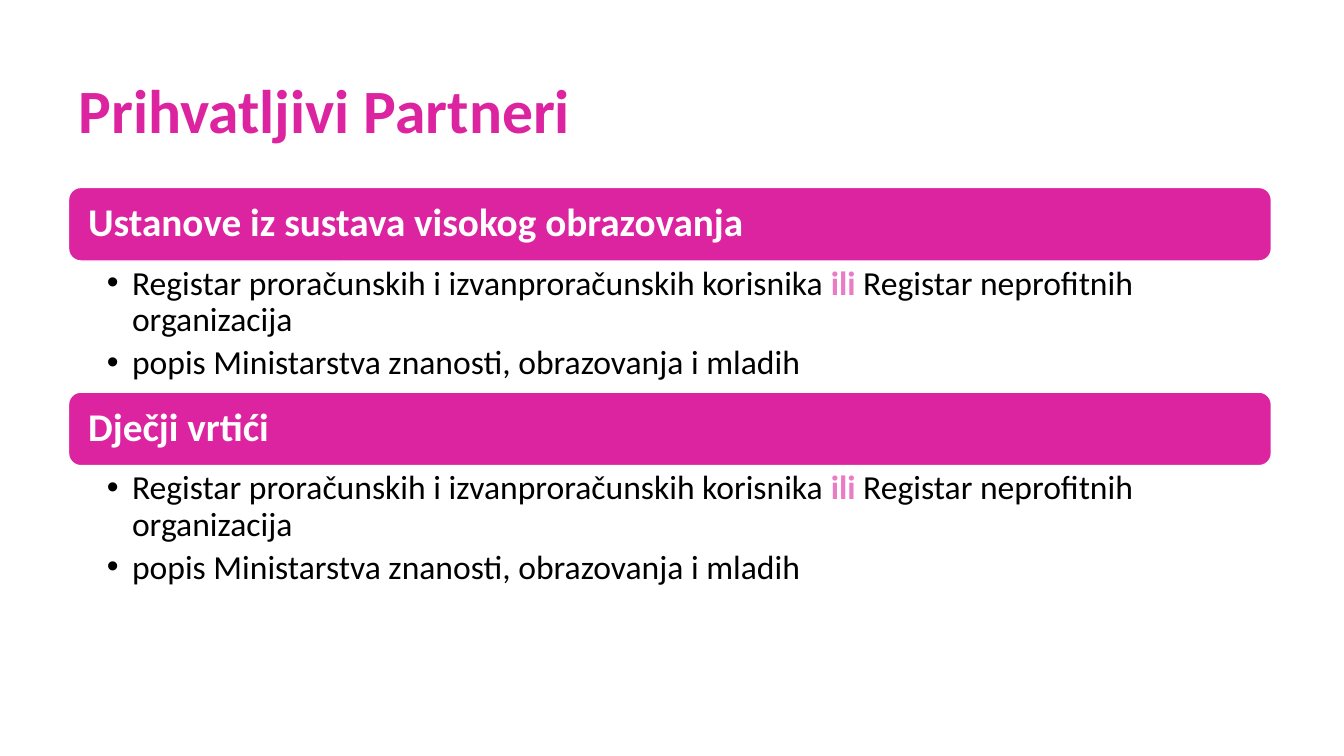
from lxml.etree import SubElement
from pptx import Presentation
from pptx.dml.color import RGBColor
from pptx.enum.shapes import MSO_SHAPE
from pptx.enum.text import MSO_ANCHOR, PP_ALIGN
from pptx.oxml.ns import qn
from pptx.util import Pt

PX = 9144  # EMU per px, 100 px to the inch
MAGENTA, PINK, WHITE, BLACK = "DC24A0", "EA7CC6", "FFFFFF", "000000"


def rgb(hex_color):
    return RGBColor.from_string(hex_color)


def add_run(paragraph, text, size, color, bold):
    run = paragraph.add_run()
    run.text = text
    run.font.color.rgb = rgb(color)
    for key, value in {"name": "Calibri", "size": Pt(size), "bold": bold}.items():
        setattr(run.font, key, value)


prs = Presentation()
prs.slide_width, prs.slide_height = 1333 * PX, 750 * PX
slide = prs.slides.add_slide(prs.slide_layouts[6])

# Title
title = slide.shapes.add_textbox(68 * PX, 40 * PX, 1057 * PX, 145 * PX).text_frame
title.word_wrap = True
title.vertical_anchor = MSO_ANCHOR.MIDDLE
title.paragraphs[0].line_spacing = 0.9
add_run(title.paragraphs[0], "Prihvatljivi Partneri", 44, MAGENTA, True)

# Partner groups: a heading bar with its registers below
LEFT, WIDTH, BAR_HEIGHT, LIST_HEIGHT = 68, 1193, 73, 130
FIRST_TOP, GROUP_STEP = 186, 203
partners = ["Ustanove iz sustava visokog obrazovanja", "Dječji vrtići"]
registers = [
    [
        ("Registar proračunskih i izvanproračunskih korisnika ", BLACK, False),
        ("ili", PINK, True),
        (" Registar neprofitnih organizacija", BLACK, False),
    ],
    [("popis Ministarstva znanosti, obrazovanja i mladih", BLACK, False)],
]
bar_format = {
    "word_wrap": True,
    "vertical_anchor": MSO_ANCHOR.MIDDLE,
    "margin_left": 16 * PX,
    "margin_right": 16 * PX,
}
list_format = {
    "word_wrap": True,
    "vertical_anchor": MSO_ANCHOR.TOP,
    "margin_left": 38 * PX,
    "margin_right": 24 * PX,
    "margin_top": 4 * PX,
    "margin_bottom": 4 * PX,
}

for index, partner in enumerate(partners):
    top = FIRST_TOP + index * GROUP_STEP

    # Heading bar
    bar = slide.shapes.add_shape(
        MSO_SHAPE.ROUNDED_RECTANGLE, LEFT * PX, top * PX, WIDTH * PX, BAR_HEIGHT * PX
    )
    bar.shadow.inherit = False
    bar.fill.solid()
    bar.fill.fore_color.rgb = rgb(MAGENTA)
    bar.line.color.rgb = rgb(WHITE)
    bar.line.width = Pt(1)
    for key, value in bar_format.items():
        setattr(bar.text_frame, key, value)
    heading = bar.text_frame.paragraphs[0]
    heading.alignment = PP_ALIGN.LEFT
    heading.line_spacing = 0.9
    add_run(heading, partner, 28, WHITE, True)

    # Bulleted registers
    register_list = slide.shapes.add_textbox(
        LEFT * PX, (top + BAR_HEIGHT + 1) * PX, WIDTH * PX, LIST_HEIGHT * PX
    ).text_frame
    for key, value in list_format.items():
        setattr(register_list, key, value)
    for row, pieces in enumerate(registers):
        item = register_list.add_paragraph() if row else register_list.paragraphs[0]
        item.level = 1
        item.line_spacing = 0.9
        item.space_after = Pt(4.8)
        properties = item._p.get_or_add_pPr()
        properties.set("marL", str(25 * PX))
        properties.set("indent", str(-25 * PX))
        SubElement(properties, qn("a:buFont"), typeface="Arial")
        SubElement(properties, qn("a:buChar"), char="•")
        for text, color, bold in pieces:
            add_run(item, text, 24, color, bold)

prs.save("out.pptx")
